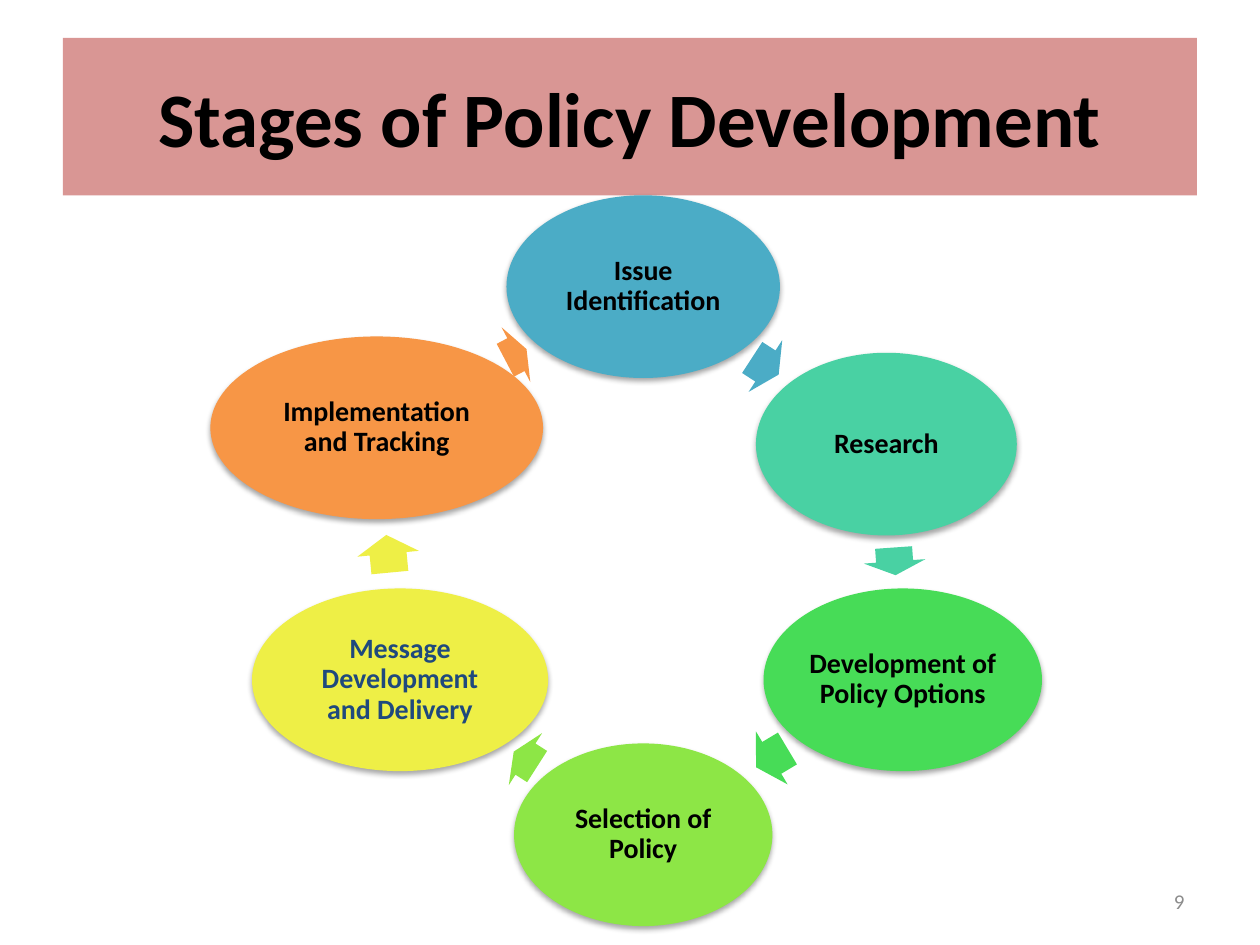
from dataclasses import dataclass

from lxml import etree
from pptx import Presentation
from pptx import util as u
from pptx.dml.color import RGBColor
from pptx.enum import shapes, text
from pptx.oxml.ns import qn

PX = 9144


@dataclass(frozen=True)
class Theme:
    font: str = "Calibri"
    ink: str = "000000"
    navy: str = "1F497D"
    grey: str = "8C8C8C"
    banner: str = "D99694"
    blue: str = "4BACC6"
    teal: str = "49D1A3"
    green: str = "47DC57"
    lime: str = "8DE646"
    yellow: str = "EEEF46"
    orange: str = "F79646"
    title: int = 44
    label: int = 16
    number: int = 12


T = Theme()
NODE_H, ARROW_H, INSET = 145, 49, 2

STAGES = [
    ("Issue Identification", T.blue, T.ink, (235, 0, 217), (428, 111, 25, 33)),
    ("Research", T.teal, T.ink, (433, 125, 207), (532, 266, 22, 85.9)),
    ("Development of Policy Options", T.green, T.ink, (439, 312, 221), (431, 422, 29, 149.1)),
    ("Selection of Policy", T.lime, T.ink, (241, 435, 205), (239, 423, 22, 212.6)),
    ("Message Development and Delivery", T.yellow, T.navy, (33, 312, 235), (126, 260, 30, 264.6)),
    ("Implementation and Tracking", T.orange, T.ink, (0, 112, 264), (233, 102, 19, 332.3)),
]


def set_all(obj, values):
    for name, value in values.items():
        setattr(obj, name, value)


def emu(box):
    return [u.Emu(v * PX) for v in box]


def add_shape(s, kind, box, fill):
    sp = s.shapes.add_shape(kind, *emu(box))
    sp.shadow.inherit = False
    sp.fill.solid()
    sp.fill.fore_color.rgb = RGBColor.from_string(fill)
    sp.line.fill.background()
    return sp


def write(sp, words, size, color, align, bold=False, frame=None, para=None):
    tf = sp.text_frame
    set_all(tf, {"word_wrap": True, "vertical_anchor": text.MSO_ANCHOR.MIDDLE, **(frame or {})})
    p = tf.paragraphs[0]
    set_all(p, {"alignment": align, **(para or {})})
    r = p.add_run()
    r.text = words
    set_all(r.font, {"name": T.font, "size": u.Pt(size), "bold": bold})
    r.font.color.rgb = RGBColor.from_string(color)


def add_shadow(sp):
    effects = sp._element.spPr.find(qn("a:effectLst"))
    shadow = etree.SubElement(effects, qn("a:outerShdw"), blurRad="40000", dist="23000",
                              dir="5400000", rotWithShape="0")
    color = etree.SubElement(shadow, qn("a:srgbClr"), val=T.ink)
    etree.SubElement(color, qn("a:alpha"), val="35000")


def title_banner(s, box):
    sp = add_shape(s, shapes.MSO_SHAPE.RECTANGLE, box, T.banner)
    write(sp, "Stages of Policy Development", T.title, T.ink, text.PP_ALIGN.CENTER, True)


def page_number(s, box):
    sp = s.shapes.add_textbox(*emu(box))
    write(sp, "9", T.number, T.grey, text.PP_ALIGN.RIGHT)


def stage_cycle(s, box):
    x, y = box[:2]
    margins = {f"margin_{side}": u.Emu(INSET * PX) for side in ("left", "top", "right", "bottom")}
    for words, fill, ink, (nx, ny, nw), (ax, ay, aw, angle) in STAGES:
        node = add_shape(s, shapes.MSO_SHAPE.OVAL, (x + nx, y + ny, nw, NODE_H), fill)
        add_shadow(node)
        write(node, words, T.label, ink, text.PP_ALIGN.CENTER, True, margins, {"line_spacing": 0.9})
        arrow = add_shape(s, shapes.MSO_SHAPE.RIGHT_ARROW, (x + ax, y + ay, aw, ARROW_H), fill)
        arrow.rotation = angle
        arrow.adjustments[0] = 0.6
        arrow.adjustments[1] = 0.5


def main():
    prs = Presentation()
    set_all(prs, {"slide_width": u.Emu(1000 * PX), "slide_height": u.Emu(750 * PX)})
    s = prs.slides.add_slide(prs.slide_layouts[6])
    title_banner(s, (50, 30, 900, 125))
    page_number(s, (717, 695, 233, 40))
    stage_cycle(s, (167, 155, 660, 580))
    prs.save("out.pptx")


if __name__ == "__main__":
    main()
